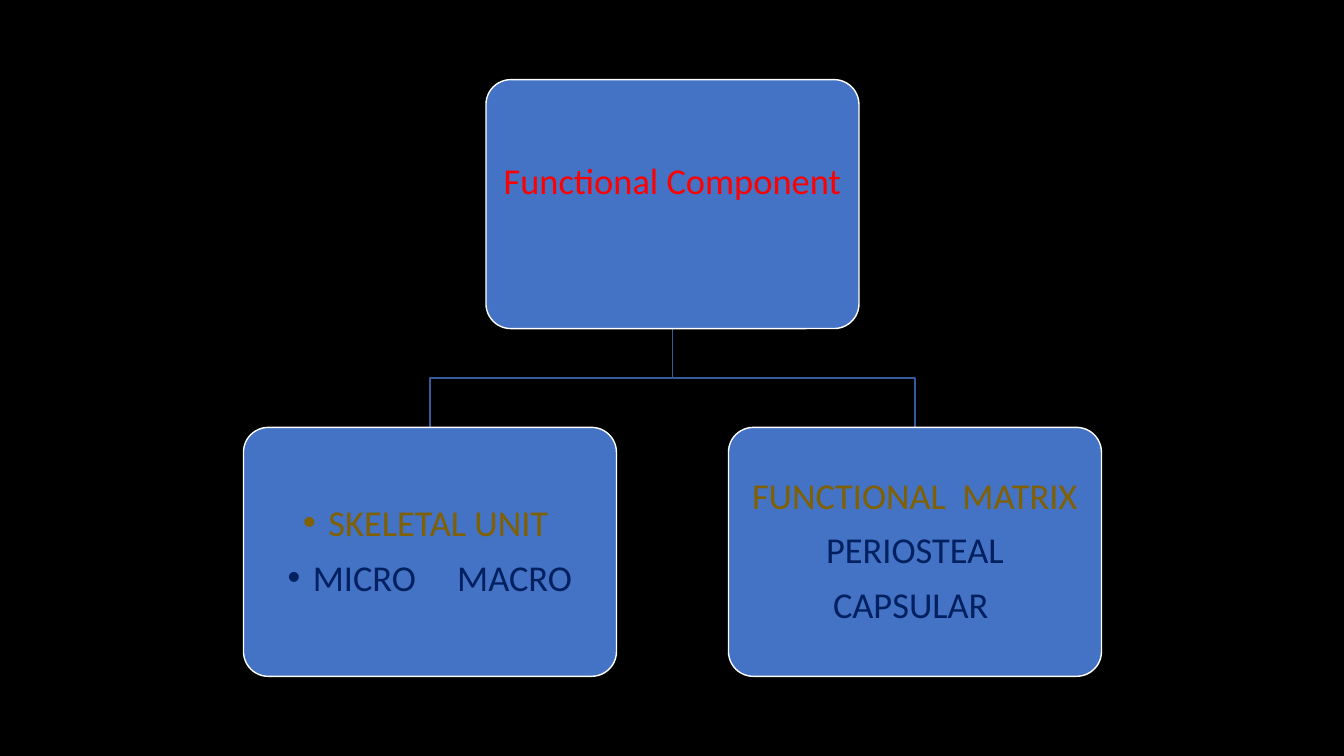
from copy import deepcopy

from lxml.etree import SubElement
from pptx import Presentation
from pptx.dml.color import RGBColor
from pptx.enum.shapes import MSO_SHAPE
from pptx.enum.text import MSO_ANCHOR, MSO_AUTO_SIZE, PP_ALIGN
from pptx.oxml.ns import qn
from pptx.util import Inches, Pt

COLORS = {
    "background": "000000",
    "node": "4472C4",
    "border": "FFFFFF",
    "branch": "365B9D",
    "root": "FF0000",
    "heading": "806000",
    "detail": "002060",
}
NODE_WIDTH, NODE_HEIGHT = 3.7, 2.47
CENTER = 6.67
BRANCH_OFFSET = 2.405
ROOT_TOP, CHILD_TOP = 0.79, 4.24


def color(name):
    return RGBColor.from_string(COLORS[name])


def write_line(paragraph, text, *, color_name, size=26, font="Calibri",
               bullet=False, break_after=False):
    paragraph.alignment = PP_ALIGN.CENTER
    paragraph.line_spacing = 0.9
    paragraph.space_before = Pt(0)
    paragraph.space_after = Pt(11)
    run = paragraph.add_run()
    run.text = text
    run.font.name = font
    run.font.size = Pt(size)
    run.font.color.rgb = color(color_name)

    properties = paragraph._p.get_or_add_pPr()
    indent = Inches(0.25) if bullet else 0
    properties.set("marL", str(indent))
    properties.set("indent", str(-indent))
    if bullet:
        SubElement(properties, qn("a:buFont")).set("typeface", "Arial")
        SubElement(properties, qn("a:buChar")).set("char", "•")
    else:
        SubElement(properties, qn("a:buNone"))

    if break_after:
        paragraph.add_line_break()
        run_format = run._r.get_or_add_rPr()
        paragraph._p[-1].append(deepcopy(run_format))
        end_format = SubElement(paragraph._p, qn("a:endParaRPr"))
        end_format.set("sz", str(size * 100))


class HierarchySlide:
    """Holds the presentation, its slide and the shared node style."""

    def __init__(self):
        self.presentation = Presentation()
        self.presentation.slide_width = Inches(13.33)
        self.presentation.slide_height = Inches(7.5)
        two_content = self.presentation.slide_layouts[3]
        self.slide = self.presentation.slides.add_slide(two_content)
        for placeholder in list(self.slide.placeholders)[3:]:
            placeholder._element.getparent().remove(placeholder._element)
        fill = self.slide.background.fill
        fill.solid()
        fill.fore_color.rgb = color("background")

    def add_branch(self, child_center):
        root_bottom = ROOT_TOP + NODE_HEIGHT
        middle = (root_bottom + CHILD_TOP) / 2
        builder = self.slide.shapes.build_freeform(
            Inches(CENTER), Inches(root_bottom))
        corners = [(CENTER, middle), (child_center, middle),
                   (child_center, CHILD_TOP)]
        builder.add_line_segments(
            [(Inches(x), Inches(y)) for x, y in corners], close=False)
        branch = builder.convert_to_shape()
        branch.shadow.inherit = False
        branch.fill.background()
        branch.line.color.rgb = color("branch")
        branch.line.width = Pt(1)

    def add_node(self, placeholder, center, top, lines):
        """Draw a rounded box and lay the placeholder's text over it."""
        frame = [Inches(value) for value in
                 (center - NODE_WIDTH / 2, top, NODE_WIDTH, NODE_HEIGHT)]
        box = self.slide.shapes.add_shape(MSO_SHAPE.ROUNDED_RECTANGLE, *frame)
        box.adjustments[0] = 0.1
        box.shadow.inherit = False
        box.fill.solid()
        box.fill.fore_color.rgb = color("node")
        box.line.color.rgb = color("border")
        box.line.width = Pt(1)

        (placeholder.left, placeholder.top,
         placeholder.width, placeholder.height) = frame
        box._element.addnext(placeholder._element)
        text_frame = placeholder.text_frame
        text_frame.word_wrap = True
        text_frame.auto_size = MSO_AUTO_SIZE.NONE
        text_frame.vertical_anchor = MSO_ANCHOR.MIDDLE
        for side in ("left", "top", "right", "bottom"):
            setattr(text_frame, f"margin_{side}", Inches(0.11))
        for index, (text, line_format) in enumerate(lines):
            paragraph = (text_frame.add_paragraph() if index
                         else text_frame.paragraphs[0])
            write_line(paragraph, text, **line_format)

    def save(self):
        self.presentation.save("out.pptx")


def main():
    hierarchy = HierarchySlide()
    title, left_body, right_body = list(hierarchy.slide.placeholders)[:3]
    left, right = CENTER - BRANCH_OFFSET, CENTER + BRANCH_OFFSET
    heading = {"color_name": "heading"}
    detail = {"color_name": "detail"}

    for child_center in (left, right):
        hierarchy.add_branch(child_center)
    hierarchy.add_node(title, CENTER, ROOT_TOP, [
        ("Functional Component", {"color_name": "root", "break_after": True}),
    ])
    hierarchy.add_node(left_body, left, CHILD_TOP, [
        ("SKELETAL UNIT ", {**heading, "bullet": True}),
        ("MICRO     MACRO", {**detail, "bullet": True}),
    ])
    hierarchy.add_node(right_body, right, CHILD_TOP, [
        ("FUNCTIONAL  MATRIX", heading),
        ("PERIOSTEAL", detail),
        ("CAPSULAR ", detail),
    ])
    hierarchy.save()


if __name__ == "__main__":
    main()
